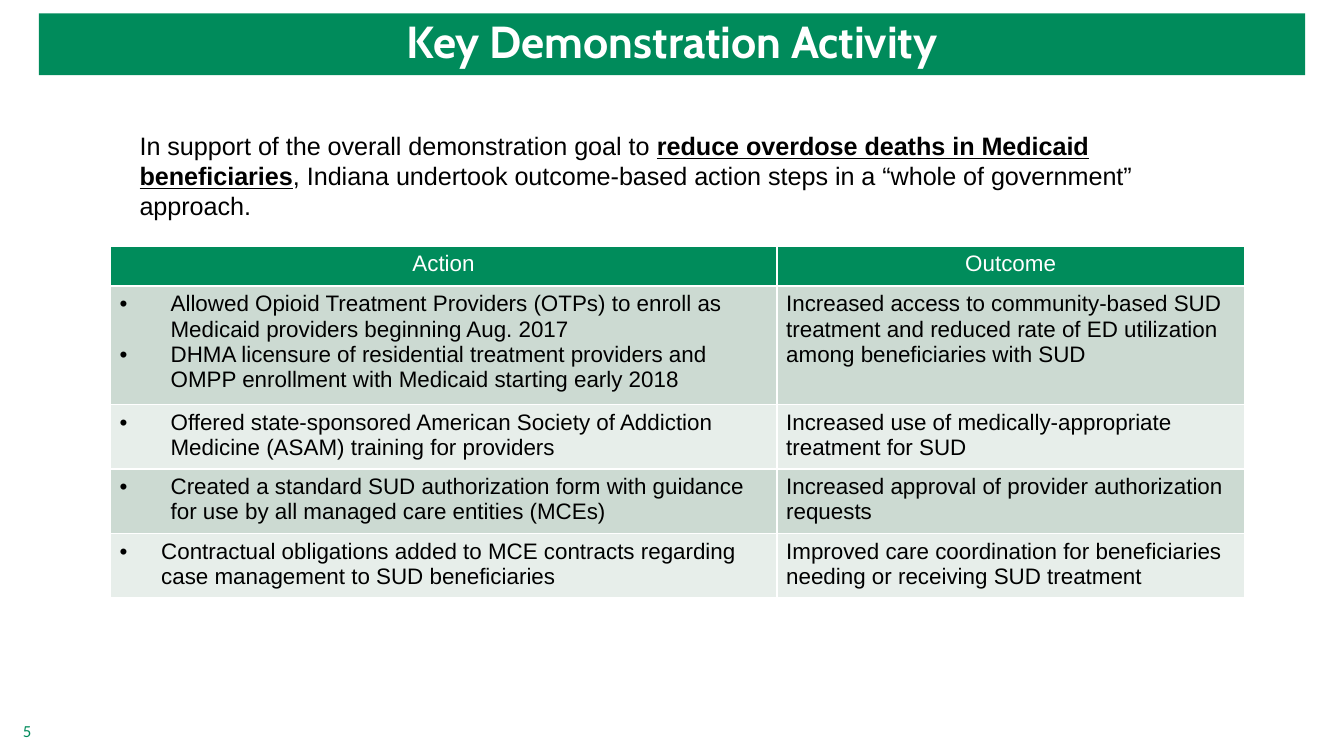
from lxml import etree
from pptx import Presentation
from pptx import util as u
from pptx.dml.color import RGBColor
from pptx.enum import shapes, text
from pptx.oxml.ns import qn

GREEN, HEADER_GREEN = "008B5B", "008C5B"
BANDS = ["CCDAD2", "E7EEEA"]
WHITE, BLACK = "FFFFFF", "000000"
BODY = {"name": "Arial", "size": u.Pt(12)}
INTRO = {"name": "Arial", "size": u.Pt(13.5)}
STRONG = {"bold": True, "underline": True}

COLUMN_WIDTHS = [4.96, 3.48]
ROW_HEIGHTS = [0.3, 0.88, 0.47, 0.47, 0.47]
HEADINGS = ["Action", "Outcome"]
# Each row: actions, outcome, bullet indent in inches
STEPS = [
    (["Allowed Opioid Treatment Providers (OTPs) to enroll as Medicaid providers beginning Aug. 2017",
      "DHMA licensure of residential treatment providers and OMPP enrollment with Medicaid starting early 2018"],
     "Increased access to community-based SUD treatment and reduced rate of ED utilization "
     "among beneficiaries with SUD", 0.38),
    (["Offered state-sponsored American Society of Addiction Medicine (ASAM) training for providers"],
     "Increased use of medically-appropriate treatment for SUD", 0.38),
    (["Created a standard SUD authorization form with guidance for use by all managed care entities (MCEs)"],
     "Increased approval of provider authorization requests", 0.38),
    (["Contractual obligations added to MCE contracts regarding case management to SUD beneficiaries"],
     "Improved care coordination for beneficiaries needing or receiving SUD treatment", 0.31),
]


def set_color(color_format, value):
    color_format.rgb = RGBColor.from_string(value)


def set_fill(fill, value):
    fill.solid()
    set_color(fill.fore_color, value)


def set_attributes(target, values):
    for name, value in values.items():
        setattr(target, name, value)


def add_run(paragraph, words, color, font):
    run = paragraph.add_run()
    run.text = words
    set_attributes(run.font, font)
    set_color(run.font.color, color)


def set_margins(target, horizontal, vertical):
    for side in ("left", "right"):
        setattr(target, f"margin_{side}", u.Inches(horizontal))
    for side in ("top", "bottom"):
        setattr(target, f"margin_{side}", u.Inches(vertical))


def add_bullet(paragraph, indent):
    properties = paragraph._p.get_or_add_pPr()
    properties.set("marL", str(u.Inches(indent)))
    properties.set("indent", str(-u.Inches(indent)))
    color = etree.SubElement(properties, qn("a:buClr"))
    etree.SubElement(color, qn("a:srgbClr"), val=BLACK)
    etree.SubElement(properties, qn("a:buFont"), typeface="Arial")
    etree.SubElement(properties, qn("a:buChar"), char="•")


def set_borders(cell):
    properties = cell._tc.get_or_add_tcPr()
    for position, side in enumerate(("lnL", "lnR", "lnT", "lnB")):
        line = etree.Element(qn(f"a:{side}"), w=str(u.Pt(1)))
        fill = etree.SubElement(line, qn("a:solidFill"))
        etree.SubElement(fill, qn("a:srgbClr"), val=WHITE)
        properties.insert(position, line)


def add_text_box(slide, box):
    frame = slide.shapes.add_textbox(*map(u.Inches, box)).text_frame
    frame.word_wrap = True
    return frame


def add_title(slide, box):
    banner = slide.shapes.add_shape(shapes.MSO_SHAPE.RECTANGLE, *map(u.Inches, box))
    banner.shadow.inherit = False
    set_fill(banner.fill, GREEN)
    banner.line.fill.background()
    frame = banner.text_frame
    set_margins(frame, 0.05, 0.05)
    set_attributes(frame, {"word_wrap": True, "vertical_anchor": text.MSO_ANCHOR.BOTTOM})
    paragraph = frame.paragraphs[0]
    set_attributes(paragraph, {"alignment": text.PP_ALIGN.CENTER, "line_spacing": 0.95})
    add_run(paragraph, "Key Demonstration Activity", WHITE,
            {"name": "Cabin", "size": u.Pt(24), "bold": True})


def add_intro(slide, box):
    paragraph = add_text_box(slide, box).paragraphs[0]
    add_run(paragraph, "In support of the overall demonstration goal to ", BLACK, INTRO)
    add_run(paragraph, "reduce overdose deaths in Medicaid beneficiaries", BLACK, INTRO | STRONG)
    add_run(paragraph, ", Indiana undertook outcome-based action steps in a “whole of government” approach.",
            BLACK, INTRO)


def fill_cell(cell, lines, fill, color=BLACK, alignment=text.PP_ALIGN.LEFT, indent=0):
    set_margins(cell, 0.07, 0.04)
    set_fill(cell.fill, fill)
    set_borders(cell)
    frame = cell.text_frame
    for index, words in enumerate(lines):
        paragraph = frame.add_paragraph() if index else frame.paragraphs[0]
        paragraph.alignment = alignment
        if indent:
            add_bullet(paragraph, indent)
        add_run(paragraph, words, color, BODY)


def add_steps_table(slide, left, top):
    box = (left, top, sum(COLUMN_WIDTHS), sum(ROW_HEIGHTS))
    table = slide.shapes.add_table(len(ROW_HEIGHTS), len(COLUMN_WIDTHS), *map(u.Inches, box)).table
    for column, width in zip(table.columns, COLUMN_WIDTHS):
        column.width = u.Inches(width)
    for row, height in zip(table.rows, ROW_HEIGHTS):
        row.height = u.Inches(height)
    for column, heading in enumerate(HEADINGS):
        fill_cell(table.cell(0, column), [heading], HEADER_GREEN, WHITE, text.PP_ALIGN.CENTER)
    for index, (actions, outcome, indent) in enumerate(STEPS):
        band = BANDS[index % 2]
        fill_cell(table.cell(index + 1, 0), actions, band, indent=indent)
        fill_cell(table.cell(index + 1, 1), [outcome], band)


def add_page_number(slide, box):
    frame = add_text_box(slide, box)
    set_margins(frame, 0, 0)
    paragraph = frame.paragraphs[0]
    paragraph.line_spacing = 1.03
    paragraph._p.get_or_add_pPr().set("marL", str(u.Inches(0.03)))
    add_run(paragraph, "5", GREEN, {"name": "Calibri", "size": u.Pt(9)})


def main():
    presentation = Presentation()
    presentation.slide_width = u.Inches(10)
    presentation.slide_height = presentation.slide_width * 9 // 16
    slide = presentation.slides.add_slide(presentation.slide_layouts[6])
    add_title(slide, (0.29, 0.1, 9.42, 0.46))
    add_page_number(slide, (0.14, 5.36, 0.2, 0.16))
    add_steps_table(slide, 0.82, 1.83)
    add_intro(slide, (0.94, 0.92, 8.19, 0.78))
    presentation.save("out.pptx")


if __name__ == "__main__":
    main()
